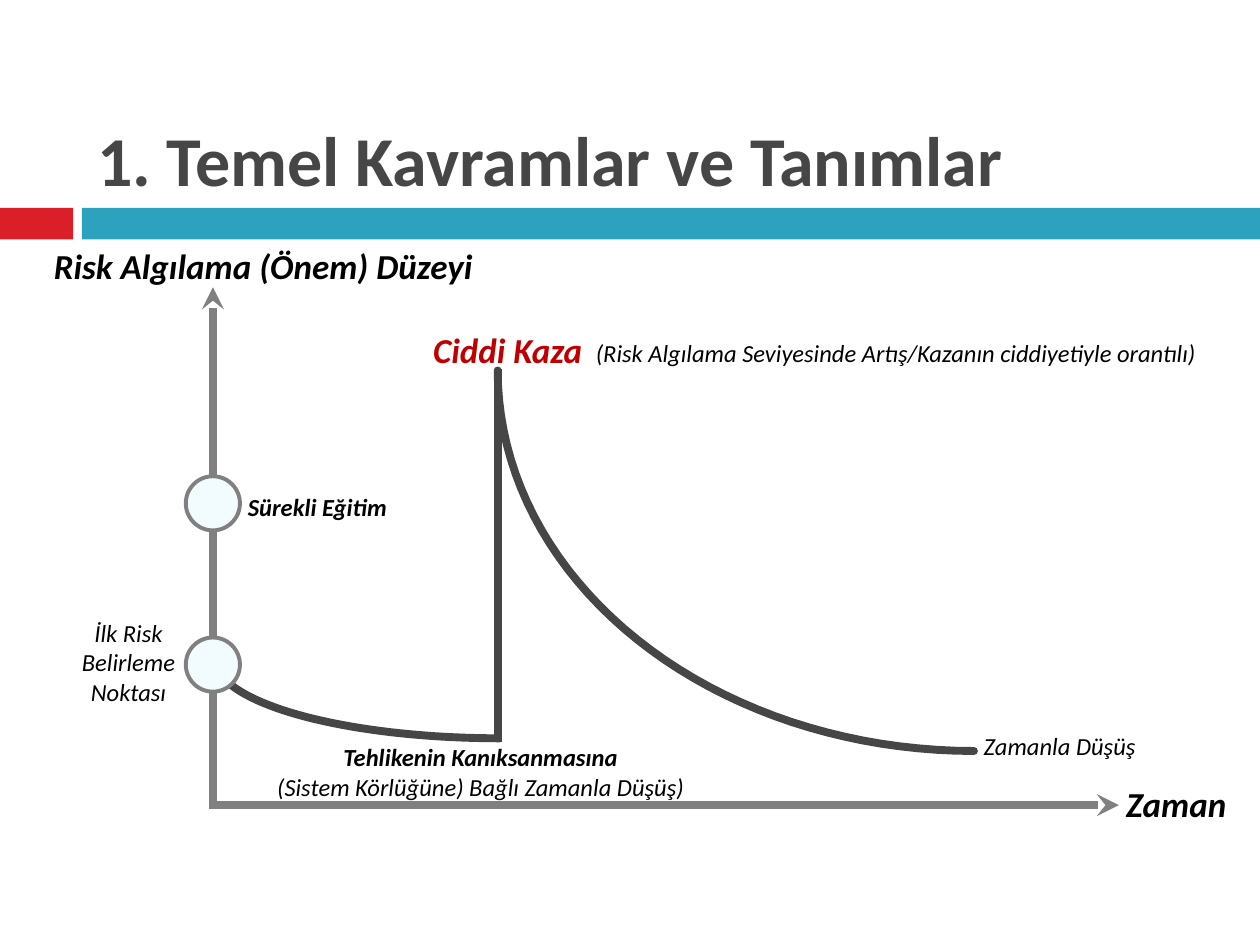
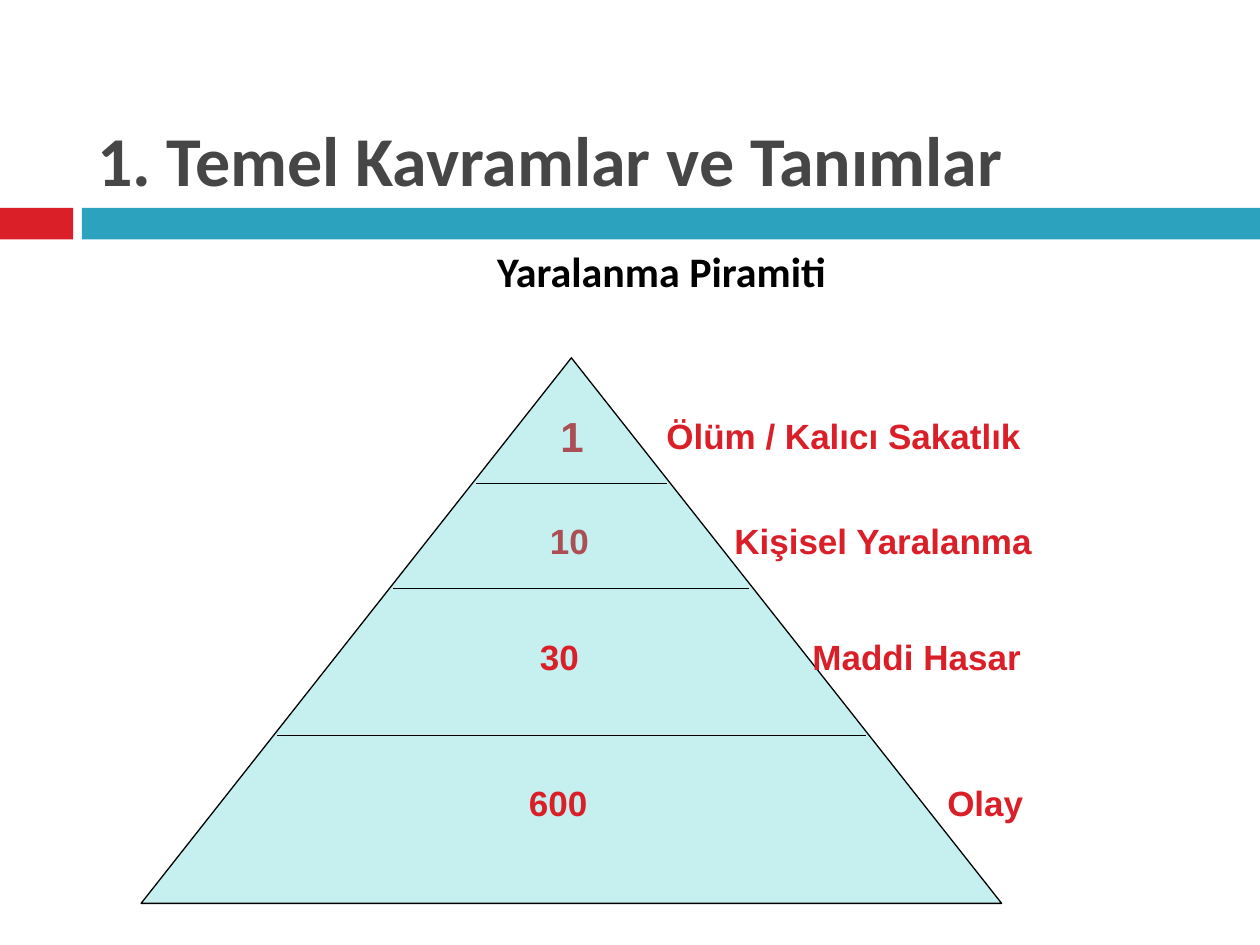
from math import cos, sin, pi

from lxml import etree
from pptx import Presentation
from pptx.dml.color import RGBColor
from pptx.enum import shapes, text
from pptx.oxml.ns import qn
from pptx.util import Inches, Pt

TITLE = "1. Temel Kavramlar ve Tanımlar"
RED, TEAL, DARK, GREY = "DA1F28", "2DA2BF", "464646", "808080"
BLACK, ACCIDENT, PALE, AQUA = "000000", "C00000", "F2FBFD", "33CCCC"
LEFT, CENTER, RIGHT = text.PP_ALIGN.LEFT, text.PP_ALIGN.CENTER, text.PP_ALIGN.RIGHT

BANDS = [((0, 1.65, 0.58, 0.25), RED), ((0.65, 1.65, 9.35, 0.25), TEAL)]

# Risk perception chart: axes and curve points in inches
ORIGIN = (1.69, 6.39)
AXIS_ENDS = [((1.69, 6.42), (1.69, 2.28)), (ORIGIN, (8.88, 6.39))]
# Each decay: centre and radii of the ellipse whose lower left quarter is drawn
DECAYS = [((3.97, 5.22), (2.27, 0.64), "flat"), ((7.73, 2.94), (3.78, 3.02), "rnd")]
ACCIDENT_JUMP = ((3.95, 5.89), (3.95, 2.93))
MARK_SIZE, MARK_TOPS = 0.43, (3.78, 5.06)
# box, lines, size, bold for each line, alignment, colour
CURVE_LABELS = [
    ((0.3, 1.89, 3.58, 0.43), ["Risk Algılama (Önem) Düzeyi"], 20, [True], CENTER, BLACK),
    ((8.84, 6.16, 1.1, 0.43), ["Zaman"], 20, [True], LEFT, BLACK),
    ((3.18, 2.56, 1.54, 0.43), ["Ciddi Kaza"], 20, [True], RIGHT, ACCIDENT),
    ((0.36, 4.85, 1.32, 0.81), ["İlk Risk", "Belirleme Noktası"], 14, [False, False],
     CENTER, BLACK),
    ((4.63, 2.63, 5.22, 0.34),
     ["(Risk Algılama Seviyesinde Artış/Kazanın ciddiyetiyle orantılı)"], 14, [False],
     LEFT, BLACK),
    ((7.49, 5.75, 1.84, 0.34), ["Zamanla Düşüş"], 14, [False], CENTER, BLACK),
    ((1.99, 5.84, 3.65, 0.57),
     ["Tehlikenin Kanıksanmasına", "(Sistem Körlüğüne) Bağlı Zamanla Düşüş)"], 14,
     [True, False], CENTER, BLACK),
    ((1.61, 3.85, 1.56, 0.34), ["Sürekli Eğitim"], 14, [True], RIGHT, BLACK),
]

# Injury pyramid
PYRAMID_TITLE = "Yaralanma Piramiti"
PYRAMID = (1.12, 2.84, 6.83, 4.33)
DIVIDERS = (3.84, 4.67, 5.84)
# number, its size, its centre x, label, label x, middle y
LEVELS = [
    ("1", 24, 4.54, "Ölüm / Kalıcı Sakatlık", 5.19, 3.46),
    ("10", 20, 4.52, "Kişisel Yaralanma", 5.73, 4.29),
    ("30", 20, 4.44, "Maddi Hasar", 6.35, 5.21),
    ("600", 20, 4.43, "Olay", 7.42, 6.37),
]


def rgb(color):
    return RGBColor.from_string(color)


def inches(values):
    return [Inches(v) for v in values]


def style_runs(p, size, color, bold=True, italic=False, font="Calibri"):
    for r in p.runs:
        f = r.font
        f.name, f.size, f.bold, f.italic = font, Pt(size), bold, italic
        f.color.rgb = rgb(color)


def add_shape(s, kind, box, fill, line=None, width=1):
    sp = s.shapes.add_shape(kind, *inches(box))
    sp.shadow.inherit = False
    sp.fill.solid()
    sp.fill.fore_color.rgb = rgb(fill)
    if line:
        sp.line.color.rgb = rgb(line)
        sp.line.width = Pt(width)
    else:
        sp.line.fill.background()
    return sp


def add_text(s, box, lines, size, color, bolds=(True,), align=CENTER,
             italic=False, font="Calibri"):
    tf = s.shapes.add_textbox(*inches(box)).text_frame
    tf.word_wrap = True
    tf.vertical_anchor = text.MSO_ANCHOR.MIDDLE
    tf.text = "\n".join(lines)
    for p, bold in zip(tf.paragraphs, bolds):
        p.alignment = align
        style_runs(p, size, color, bold, italic, font)


def add_line(s, start, end, color, width, arrow=False):
    c = s.shapes.add_connector(shapes.MSO_CONNECTOR.STRAIGHT, *inches(start + end))
    c.line.color.rgb = rgb(color)
    c.line.width = Pt(width)
    if arrow:
        etree.SubElement(c.line._get_or_add_ln(), qn("a:tailEnd"), type="stealth")
    etree.SubElement(c._element.spPr, qn("a:effectLst"))


def add_decay(s, center, radii, cap, steps=40):
    """Draw the lower left quarter of an ellipse as an open curve."""
    angles = [pi / 2 * (1 + i / steps) for i in range(steps + 1)]
    points = [(Inches(center[0] + radii[0] * cos(a)), Inches(center[1] + radii[1] * sin(a)))
              for a in angles]
    builder = s.shapes.build_freeform(*points[0])
    builder.add_line_segments(points[1:], close=False)
    sp = builder.convert_to_shape()
    sp.shadow.inherit = False
    sp.fill.background()
    sp.line.color.rgb = rgb(DARK)
    sp.line.width = Pt(4.5)
    sp.line._get_or_add_ln().set("cap", cap)


def add_slide(prs):
    s = prs.slides.add_slide(prs.slide_layouts.get_by_name("Title Only"))
    for box, color in BANDS:
        add_shape(s, shapes.MSO_SHAPE.RECTANGLE, box, color)
    title = s.shapes.title
    title.left, title.top, title.width, title.height = inches((0.67, 0.17, 8.92, 1.47))
    tf = title.text_frame
    tf.text = TITLE
    tf.vertical_anchor = text.MSO_ANCHOR.BOTTOM
    tf.paragraphs[0].alignment = LEFT
    style_runs(tf.paragraphs[0], 40, DARK)
    return s


def build_risk_curve(prs):
    s = add_slide(prs)
    for start, end in AXIS_ENDS:
        add_line(s, start, end, GREY, 4.25, arrow=True)
    for decay in DECAYS:
        add_decay(s, *decay)
    add_line(s, *ACCIDENT_JUMP, DARK, 4.5)
    for top in MARK_TOPS:
        box = (ORIGIN[0] - MARK_SIZE / 2, top, MARK_SIZE, MARK_SIZE)
        add_shape(s, shapes.MSO_SHAPE.OVAL, box, PALE, GREY, 2.25)
    for box, lines, size, bolds, align, color in CURVE_LABELS:
        add_text(s, box, lines, size, color, bolds, align, italic=True)


def add_level(s, number, size, number_x, label, label_x, middle):
    top = middle - 0.2
    add_text(s, (number_x - 0.5, top, 1, 0.4), [number], size, RED, font="Arial")
    add_text(s, (label_x, top, 3.2, 0.4), [label], 20, RED, align=LEFT, font="Arial")


def build_pyramid(prs):
    s = add_slide(prs)
    for level in LEVELS[:2]:  # the upper levels show through the pyramid
        add_level(s, *level)

    sp = add_shape(s, shapes.MSO_SHAPE.ISOSCELES_TRIANGLE, PYRAMID, AQUA, BLACK, 0.75)
    color = sp.fill._xPr.find(qn("a:solidFill"))[0]
    etree.SubElement(color, qn("a:alpha"), val="28000")
    left, top, width, height = PYRAMID
    middle = left + width / 2
    for y in DIVIDERS:
        half = width / 2 * (y - top) / height - 0.03
        add_line(s, (middle - half, y), (middle + half, y), BLACK, 0.75)

    for level in LEVELS[2:]:
        add_level(s, *level)
    add_text(s, (0.75, 1.88, 9, 0.53), [PYRAMID_TITLE], 24, BLACK)


def main():
    prs = Presentation()
    prs.slide_width, prs.slide_height = inches((10, 7.5))
    build_risk_curve(prs)
    build_pyramid(prs)
    prs.save("out.pptx")


if __name__ == "__main__":
    main()
